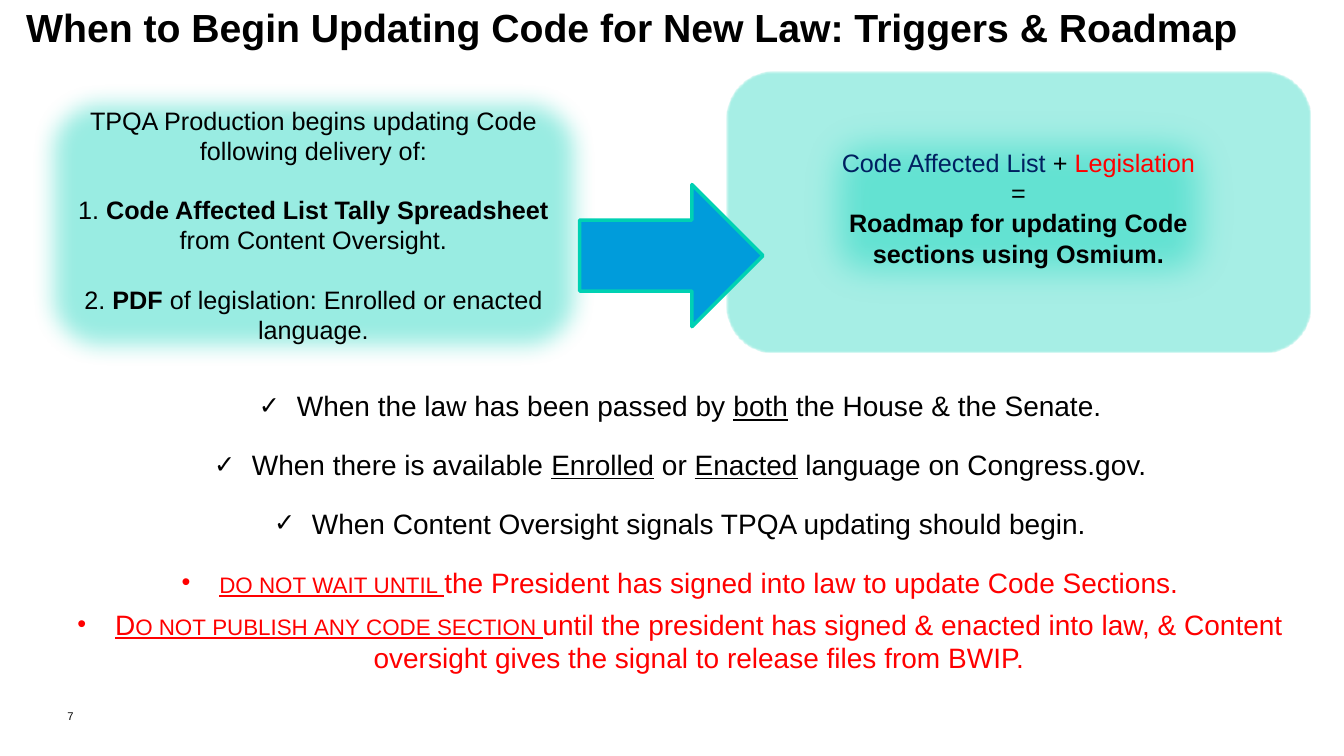
from lxml.etree import SubElement
from pptx import Presentation
from pptx.dml.color import RGBColor
from pptx.enum.shapes import MSO_SHAPE as SHAPE
from pptx.enum.text import MSO_ANCHOR as ANCHOR, PP_ALIGN as ALIGN
from pptx.oxml.ns import qn
from pptx.util import Pt

BLACK = RGBColor(0x00, 0x00, 0x00)
RED = RGBColor(0xFF, 0x00, 0x00)
NAVY = RGBColor(0x00, 0x20, 0x60)
TEAL = RGBColor(0x00, 0xD0, 0xB6)
TEAL_LINE = RGBColor(0x00, 0xD1, 0xB3)
BLUE = RGBColor(0x00, 0x9C, 0xDB)


def add_runs(p, runs, size, color=BLACK):
    """Each run is (text, flags or colour): b bold, u underline, s small caps."""
    for text, style in runs:
        r = p.add_run()
        r.text = text
        r.font.name = "Arial"
        r.font.size = Pt(size)
        r.font.color.rgb = style if isinstance(style, RGBColor) else color
        if isinstance(style, str):
            r.font.bold = "b" in style
            r.font.underline = "u" in style
            if "s" in style:
                r.font._element.set("cap", "small")


def set_frame(tf, left, top, right, bottom, anchor=ANCHOR.TOP):
    tf.word_wrap = True
    tf.vertical_anchor = anchor
    tf.margin_left, tf.margin_top = Pt(left), Pt(top)
    tf.margin_right, tf.margin_bottom = Pt(right), Pt(bottom)


prs = Presentation()
prs.slide_width, prs.slide_height = Pt(960), Pt(540)
s = prs.slides.add_slide(prs.slide_layouts[6])

# Title
sp = s.shapes.add_textbox(Pt(18.7), Pt(5.8), Pt(892), Pt(41.8))
set_frame(sp.text_frame, 0, 0, 0, 0)
p = sp.text_frame.paragraphs[0]
p.line_spacing = Pt(30)
add_runs(p, [("When to Begin Updating Code for New Law: Triggers & Roadmap", "b")], 28)

# Slide number
sp = s.shapes.add_textbox(Pt(48.2), Pt(503), Pt(21.6), Pt(17.3))
set_frame(sp.text_frame, 0, 3.6, 7.2, 3.6, ANCHOR.MIDDLE)
add_runs(sp.text_frame.paragraphs[0], [("7", "")], 8)

# Triggers: bullet, colour, line spacing, runs
triggers = [
    ("✓", BLACK, 1.5, [("When the law has been passed by ", ""), ("both", "u"),
                       (" the House & the Senate.", "")]),
    ("✓", BLACK, 1.5, [("When there is available ", ""), ("Enrolled", "u"), (" or ", ""),
                       ("Enacted", "u"), (" language on Congress.gov.", "")]),
    ("✓", BLACK, 1.5, [("When Content Oversight signals TPQA updating should begin.", "")]),
    ("•", RED, 1.5, [("do not wait until ", "us"),
                     ("the President has signed into law to update Code Sections.", "")]),
    ("•", RED, 1, [("Do not publish any code section ", "us"),
                   ("until the president has signed & enacted into law, & Content "
                    "oversight gives the signal to release files from BWIP.", "")]),
]
sp = s.shapes.add_textbox(Pt(48.2), Pt(265.7), Pt(875.5), Pt(237.6))
tf = sp.text_frame
set_frame(tf, 0, 0, 0, 0)
for i, (bullet, color, spacing, runs) in enumerate(triggers):
    p = tf.add_paragraph() if i else tf.paragraphs[0]
    p.alignment = ALIGN.CENTER
    p.line_spacing = spacing
    p.space_after = Pt(6)
    pPr = p._p.get_or_add_pPr()
    pPr.set("marL", str(Pt(27)))
    pPr.set("indent", str(-Pt(27)))
    SubElement(pPr, qn("a:buSzPct")).set("val", "90000")
    SubElement(pPr, qn("a:buFont")).set("typeface", "Arial")
    SubElement(pPr, qn("a:buChar")).set("char", bullet)
    add_runs(p, runs, 20, color)

# Teal panels: preset, box, opacity %, soft edge, side inset, space before, paragraphs
delivery = [
    [("TPQA Production begins updating Code following delivery of:", "")],
    [("1. ", ""), ("Code Affected List Tally Spreadsheet ", "b"),
     ("from Content Oversight.", "")],
    [("2. ", ""), ("PDF ", "b"), ("of legislation: Enrolled or enacted language.", "")],
]
roadmap = [
    [("Code Affected List ", NAVY), ("+ ", ""), ("Legislation", RED)],
    [("=", "")],
    [("Roadmap for updating Code sections using Osmium.", "b")],
]
panels = [
    (SHAPE.ROUNDED_RECTANGLE, (21.6, 58.3, 404.6, 204.5), 40, 17, 7.2, 20.7, delivery),
    (SHAPE.ROUNDED_RECTANGLE, (519.1, 51.1, 416.9, 200.9), 35, 1, 7.2, 0, []),
    (SHAPE.RECTANGLE, (559.4, 64.8, 336.2, 167), 40, 30, 16, 0, roadmap),
]
for preset, box, opacity, soft, inset, gap, paragraphs in panels:
    sp = s.shapes.add_shape(preset, *map(Pt, box))
    sp.shadow.inherit = False
    sp.fill.solid()
    sp.fill.fore_color.rgb = TEAL
    sp.line.fill.background()
    spPr = sp._element.spPr
    clr = spPr.find(qn("a:solidFill")).find(qn("a:srgbClr"))
    SubElement(clr, qn("a:alpha")).set("val", str(opacity * 1000))
    SubElement(spPr.find(qn("a:effectLst")), qn("a:softEdge")).set("rad", str(Pt(soft)))
    tf = sp.text_frame
    set_frame(tf, inset, 3.6, inset, 3.6, ANCHOR.MIDDLE)
    for i, runs in enumerate(paragraphs):
        p = tf.add_paragraph() if i else tf.paragraphs[0]
        p.alignment = ALIGN.CENTER
        if i:
            p.space_before = Pt(gap)
        add_runs(p, runs, 18)

# Arrow from delivery to roadmap
sp = s.shapes.add_shape(SHAPE.RIGHT_ARROW, Pt(414), Pt(131.8), Pt(131), Pt(101.5))
sp.shadow.inherit = False
sp.fill.solid()
sp.fill.fore_color.rgb = BLUE
sp.line.color.rgb = TEAL_LINE
sp.line.width = Pt(2.5)

prs.save("out.pptx")
